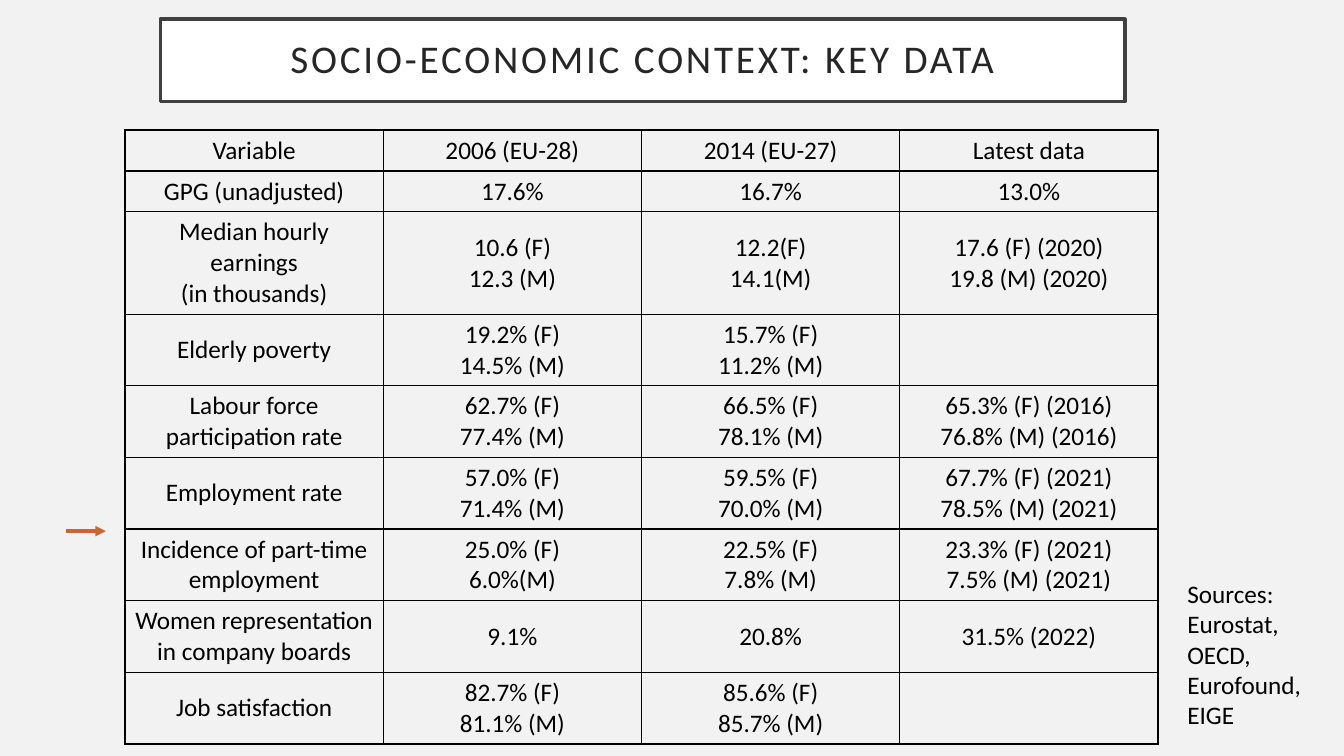
from lxml.etree import SubElement
from pptx import Presentation
from pptx.dml.color import RGBColor
from pptx.enum.shapes import MSO_CONNECTOR
from pptx.enum.text import MSO_ANCHOR, MSO_AUTO_SIZE, PP_ALIGN
from pptx.oxml import parse_xml
from pptx.oxml.ns import nsdecls, qn
from pptx.util import Pt

BACKGROUND = RGBColor(0xF2, 0xF2, 0xF2)
WHITE = RGBColor(0xFF, 0xFF, 0xFF)
BLACK = RGBColor(0x00, 0x00, 0x00)
FRAME = RGBColor(0x40, 0x40, 0x40)
HEADING = RGBColor(0x26, 0x26, 0x26)
ORANGE = RGBColor(0xC9, 0x67, 0x31)
FONT = "Calibri"

KEY_DATA = [
    ("Variable", "2006 (EU-28)", "2014 (EU-27)", "Latest data"),
    ("GPG (unadjusted)", "17.6%", "16.7%", "13.0%"),
    ("Median hourly earnings\n(in thousands)", "10.6 (F)\n12.3 (M)",
     "12.2(F)\n14.1(M)", "17.6 (F) (2020)\n19.8 (M) (2020)"),
    ("Elderly poverty", "19.2% (F)\n14.5% (M)", "15.7% (F)\n11.2% (M)", ""),
    ("Labour force participation rate", "62.7% (F)\n77.4% (M)",
     "66.5% (F)\n78.1% (M)", "65.3% (F) (2016)\n76.8% (M) (2016)"),
    ("Employment rate", "57.0% (F)\n71.4% (M)",
     "59.5% (F)\n70.0% (M)", "67.7% (F) (2021)\n78.5% (M) (2021)"),
    ("Incidence of part-time employment", "25.0% (F)\n6.0%(M)",
     "22.5% (F)\n7.8% (M)", "23.3% (F) (2021)\n7.5% (M) (2021)"),
    ("Women representation in company boards", "9.1%", "20.8%", "31.5% (2022)"),
    ("Job satisfaction", "82.7% (F)\n81.1% (M)", "85.6% (F)\n85.7% (M)", ""),
]


def style_paragraph(paragraph, size, color, alignment):
    """Set the font and alignment of one paragraph."""
    paragraph.alignment = alignment
    paragraph.font.name = FONT
    paragraph.font.size = Pt(size)
    paragraph.font.color.rgb = color


def add_heading(slide, left, top, width, height):
    """Place the framed slide title in the given box."""
    heading = slide.shapes.title
    heading.left, heading.top = Pt(left), Pt(top)
    heading.width, heading.height = Pt(width), Pt(height)
    heading.fill.solid()
    heading.fill.fore_color.rgb = WHITE
    heading.line.color.rgb = FRAME
    heading.line.width = Pt(2.5)
    frame = heading.text_frame
    frame.text = "SOCIO-ECONOMIC CONTEXT: KEY DATA"
    frame.word_wrap = True
    frame.auto_size = MSO_AUTO_SIZE.NONE
    frame.vertical_anchor = MSO_ANCHOR.MIDDLE
    frame.margin_left = frame.margin_right = Pt(14.4)
    frame.margin_top = frame.margin_bottom = Pt(14.4)
    title_line = frame.paragraphs[0]
    style_paragraph(title_line, 28, HEADING, PP_ALIGN.CENTER)
    title_line.line_spacing = 0.9
    title_line.runs[0]._r.get_or_add_rPr().set("spc", "200")


def add_borders(cell):
    """Draw a thin black line on all four sides of a cell."""
    properties = cell._tc.get_or_add_tcPr()
    for index, side in enumerate(("lnL", "lnR", "lnT", "lnB")):
        properties.insert(index, parse_xml(
            f'<a:{side} {nsdecls("a")} w="{Pt(1)}"><a:solidFill>'
            f'<a:srgbClr val="{BLACK}"/></a:solidFill></a:{side}>'))


def add_key_data(slide, left, top, width, height, row_height=29.2):
    """Place the key data table, whose rows grow with their text."""
    holder = slide.shapes.add_table(
        len(KEY_DATA), len(KEY_DATA[0]), Pt(left), Pt(top), Pt(width), Pt(height))
    table = holder.table
    table.first_row = table.horz_banding = False
    for row, values in zip(table.rows, KEY_DATA):
        row.height = Pt(row_height)
        for cell, value in zip(row.cells, values):
            cell.text = value
            cell.vertical_anchor = MSO_ANCHOR.MIDDLE
            cell.fill.background()
            add_borders(cell)
            for paragraph in cell.text_frame.paragraphs:
                style_paragraph(paragraph, 18, BLACK, PP_ALIGN.CENTER)
    holder.height = Pt(height)


def add_sources(slide, left, top, width, height):
    """Place the list of sources in the given box."""
    sources = slide.shapes.add_textbox(Pt(left), Pt(top), Pt(width), Pt(height))
    frame = sources.text_frame
    frame.word_wrap = True
    frame.auto_size = MSO_AUTO_SIZE.SHAPE_TO_FIT_TEXT
    frame.text = "Sources: Eurostat, OECD, Eurofound, EIGE"
    style_paragraph(frame.paragraphs[0], 18, BLACK, PP_ALIGN.LEFT)


def add_pointer(slide, left, top, width):
    """Draw a horizontal arrow pointing right at the table."""
    pointer = slide.shapes.add_connector(
        MSO_CONNECTOR.STRAIGHT, Pt(left), Pt(top), Pt(left + width), Pt(top))
    pointer.line.color.rgb = ORANGE
    pointer.line.width = Pt(2.5)
    SubElement(pointer.line._get_or_add_ln(), qn("a:tailEnd"), type="triangle")
    SubElement(pointer._element.spPr, qn("a:effectLst"))


def main():
    """Build the slide and save it."""
    presentation = Presentation()
    presentation.slide_width, presentation.slide_height = Pt(960), Pt(540)
    slide = presentation.slides.add_slide(presentation.slide_layouts[5])
    slide.background.fill.solid()
    slide.background.fill.fore_color.rgb = BACKGROUND
    add_heading(slide, 114.5, 13.7, 689, 59)
    add_key_data(slide, 89.3, 92.9, 738, 432.7)
    add_sources(slide, 841, 409.7, 102.2, 116.6)
    add_pointer(slide, 47.5, 379.4, 28.1)
    presentation.save("out.pptx")


if __name__ == "__main__":
    main()
